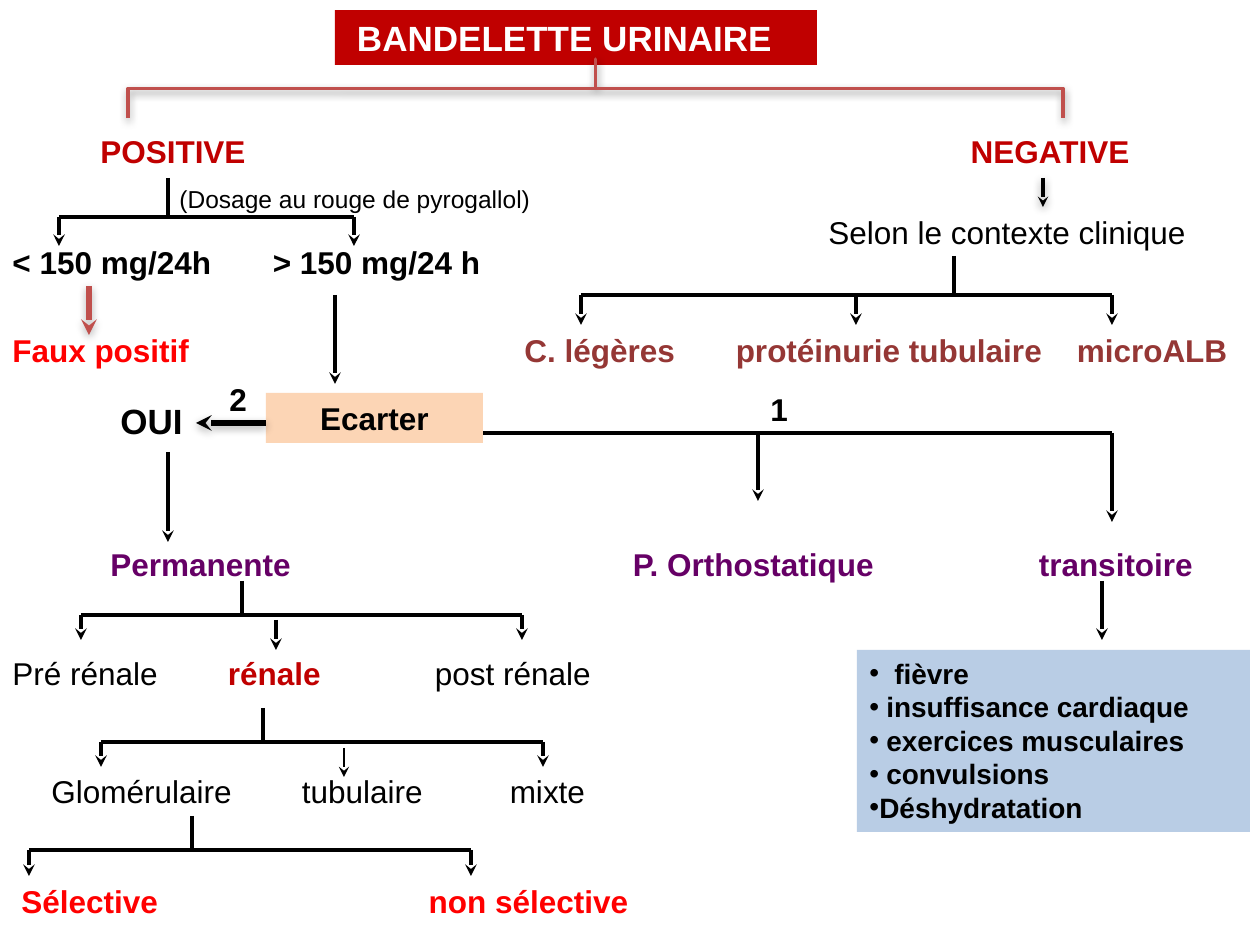
from lxml import etree
from pptx import Presentation
from pptx import util as u
from pptx.dml.color import RGBColor
from pptx.enum import shapes, text
from pptx.oxml import ns

SCALE = u.Inches(1) / 126
INSET = 12.6
COLOURS = {
    "black": "000000", "white": "FFFFFF", "crimson": "C00000", "red": "FF0000",
    "brown": "953735", "purple": "660066", "brick": "C0504D",
    "blue": "B9CDE5", "peach": "FCD5B5",
}


def emu(px):
    return u.Emu(round(px * SCALE))


def colour(name):
    return RGBColor.from_string(COLOURS[name])


def set_all(target, values):
    for name, value in values.items():
        setattr(target, name, value)


def child(parent, tag, **attributes):
    return etree.SubElement(parent, ns.qn(tag), {k: str(v) for k, v in attributes.items()})


class Diagram:
    """Holds the style and the current page; all lengths are px."""

    font = {"name": "Arial", "size": u.Pt(18), "bold": False}
    frame = {"word_wrap": True, "vertical_anchor": text.MSO_ANCHOR.TOP,
             "auto_size": text.MSO_AUTO_SIZE.SHAPE_TO_FIT_TEXT}

    def __init__(self, page):
        self.page = page

    def add_span(self, para, words, ink="black", size=18, bold=False):
        span = para.add_run()
        span.text = words
        set_all(span.font, {**self.font, "size": u.Pt(size), "bold": bold})
        span.font.color.rgb = colour(ink)

    def row(self, left, top, width, height, labels, **style):
        """One line of labels: the first at the left edge, the others at tab stops.

        Each label is (x, words) or (x, words, style of its own).
        """
        box = self.page.shapes.add_textbox(*map(emu, (left, top, width, height)))
        set_all(box.text_frame, self.frame)
        para = box.text_frame.paragraphs[0]
        stops = [emu(x - left - INSET) for x, *_ in labels[1:]]
        if stops:
            tab_list = child(para._p.get_or_add_pPr(), "a:tabLst")
            for stop in stops:
                child(tab_list, "a:tab", pos=stop, algn="l")
        for number, (_, words, *own) in enumerate(labels):
            own_style = own[0] if own else {}
            self.add_span(para, "\t" * (number > 0) + words, **{**style, **own_style})

    def label(self, left, top, width, height, words, **style):
        self.row(left, top, width, height, [(left, words)], **style)

    def panel(self, left, top, width, height, fill):
        """A filled rectangle; returns its text frame."""
        box = self.page.shapes.add_shape(
            shapes.MSO_SHAPE.RECTANGLE, *map(emu, (left, top, width, height)))
        box.shadow.inherit = False
        box.fill.solid()
        box.fill.fore_color.rgb = colour(fill)
        box.line.fill.background()
        set_all(box.text_frame, self.frame)
        box.text_frame.paragraphs[0].alignment = text.PP_ALIGN.LEFT
        return box.text_frame

    def bullets(self, frame, items, **style):
        for number, (hang, words) in enumerate(items):
            para = frame.add_paragraph() if number else frame.paragraphs[0]
            para.alignment = text.PP_ALIGN.LEFT
            props = para._p.get_or_add_pPr()
            props.set("marL", str(emu(hang)))
            props.set("indent", str(-emu(hang)))
            child(props, "a:buFont", typeface="Arial")
            child(props, "a:buChar", char="•")
            self.add_span(para, words, **style)

    def cast_shadow(self, effects, alpha, distance):
        shadow = child(effects, "a:outerShdw", blurRad=u.Pt(5), dist=u.Pt(distance),
                       dir=90 * 60000, rotWithShape=0)
        ink = child(shadow, "a:srgbClr", val=COLOURS["black"])
        child(ink, "a:alpha", val=alpha * 1000)

    def line(self, x1, y1, x2, y2, ink="black", weight=2.25, arrow=False, shadow=None):
        link = self.page.shapes.add_connector(
            shapes.MSO_CONNECTOR.STRAIGHT, *map(emu, (x1, y1, x2, y2)))
        link.line.width = u.Pt(weight)
        link.line.color.rgb = colour(ink)
        if arrow:
            child(link.line._get_or_add_ln(), "a:tailEnd", type="stealth")
        effects = child(link._element.spPr, "a:effectLst")
        if shadow:
            self.cast_shadow(effects, *shadow)

    def arrow(self, x1, y1, x2, y2, **style):
        self.line(x1, y1, x2, y2, arrow=True, **style)

    def branch(self, stem, top, bar, tip, drops):
        """A stem down to a bar, and an arrow from the bar at each drop."""
        self.line(drops[0], bar, drops[-1], bar)
        self.line(stem, top, stem, bar)
        for x in drops:
            self.arrow(x, bar, x, tip)

    def brace(self, left, top, width, height, ink, weight, shadow):
        """A square brace, turned to open downwards."""
        mark = self.page.shapes.add_shape(
            shapes.MSO_SHAPE.RIGHT_BRACE, *map(emu, (left, top, width, height)))
        mark.rotation = 270
        mark.adjustments[0] = 0
        mark.adjustments[1] = 0.5
        mark.fill.background()
        mark.line.color.rgb = colour(ink)
        mark.line.width = u.Pt(weight)
        mark.shadow.inherit = False
        self.cast_shadow(mark._element.spPr.find(ns.qn("a:effectLst")), *shadow)


def draw(diagram):
    soft, strong = (38, 1.6), (35, 1.8)

    title = diagram.panel(335, 10, 482, 55, "crimson")
    title.margin_left = emu(22)
    diagram.add_span(title.paragraphs[0], "BANDELETTE URINAIRE", "white", 20, True)
    diagram.brace(566, -379, 59, 935, "brick", 2, soft)

    diagram.row(88, 126, 1074, 50, [(101, "POSITIVE"), (971, "NEGATIVE")],
                ink="crimson", bold=True)
    diagram.label(816, 207, 393, 50, "Selon le contexte clinique")
    diagram.row(512, 325, 748, 50,
                [(524, "C. légères"), (736, "protéinurie tubulaire"), (1077, "microALB")],
                ink="brown", bold=True)
    diagram.row(0, 237, 512, 50, [(13, "< 150 mg/24h"), (273, "> 150 mg/24 h")], bold=True)
    diagram.label(0, 325, 256, 50, "Faux positif", ink="red", bold=True)
    diagram.row(98, 539, 1113, 50,
                [(111, "Permanente"), (633, "P. Orthostatique"), (1039, "transitoire")],
                ink="purple", bold=True)
    diagram.row(0, 648, 659, 50,
                [(13, "Pré rénale"), (228, "rénale", {"ink": "crimson", "bold": True}),
                 (435, "post rénale")])
    diagram.row(39, 766, 610, 50, [(52, "Glomérulaire"), (302, "tubulaire"), (510, "mixte")])
    diagram.row(9, 876, 690, 50, [(21, "Sélective"), (429, "non sélective")],
                ink="red", bold=True)
    diagram.label(167, 178, 393, 43, "(Dosage au rouge de pyrogallol)", size=14)
    diagram.label(108, 393, 137, 55, "OUI", size=20, bold=True)
    diagram.label(758, 384, 98, 50, "1", bold=True)
    diagram.label(217, 374, 137, 50, "2", bold=True)

    causes = diagram.panel(857, 650, 393, 182, "blue")
    diagram.bullets(causes, [
        (25, "fièvre"), (17, "insuffisance cardiaque"), (17, "exercices musculaires"),
        (17, "convulsions"), (10, "Déshydratation")], size=16, bold=True)

    for tree in (
        (168, 178, 217, 246, (59, 354)),
        (954, 256, 295, 325, (581, 856, 1112)),
        (242, 581, 615, 640, (81, 522)),
        (263, 708, 742, 767, (101, 543)),
        (192, 816, 850, 876, (29, 471)),
    ):
        diagram.branch(*tree)

    diagram.line(423, 433, 1112, 433)
    for x, top, tip in ((758, 433, 501), (1112, 433, 522), (1102, 581, 640),
                        (276, 620, 650), (335, 295, 384), (168, 452, 542)):
        diagram.arrow(x, top, x, tip)
    diagram.arrow(344, 748, 344, 777, weight=0.75)
    diagram.arrow(1043, 178, 1043, 207, weight=2, shadow=soft)
    diagram.arrow(89, 286, 89, 335, ink="brick", weight=3, shadow=strong)

    rule_out = diagram.panel(266, 393, 217, 50, "peach")
    rule_out.paragraphs[0].alignment = text.PP_ALIGN.CENTER
    diagram.add_span(rule_out.paragraphs[0], "Ecarter", bold=True)
    diagram.arrow(266, 423, 196, 423, weight=3, shadow=strong)


def main():
    deck = Presentation()
    set_all(deck, {"slide_width": u.Inches(10), "slide_height": u.Inches(7.5)})
    draw(Diagram(deck.slides.add_slide(deck.slide_layouts[6])))
    deck.save("out.pptx")


if __name__ == "__main__":
    main()
